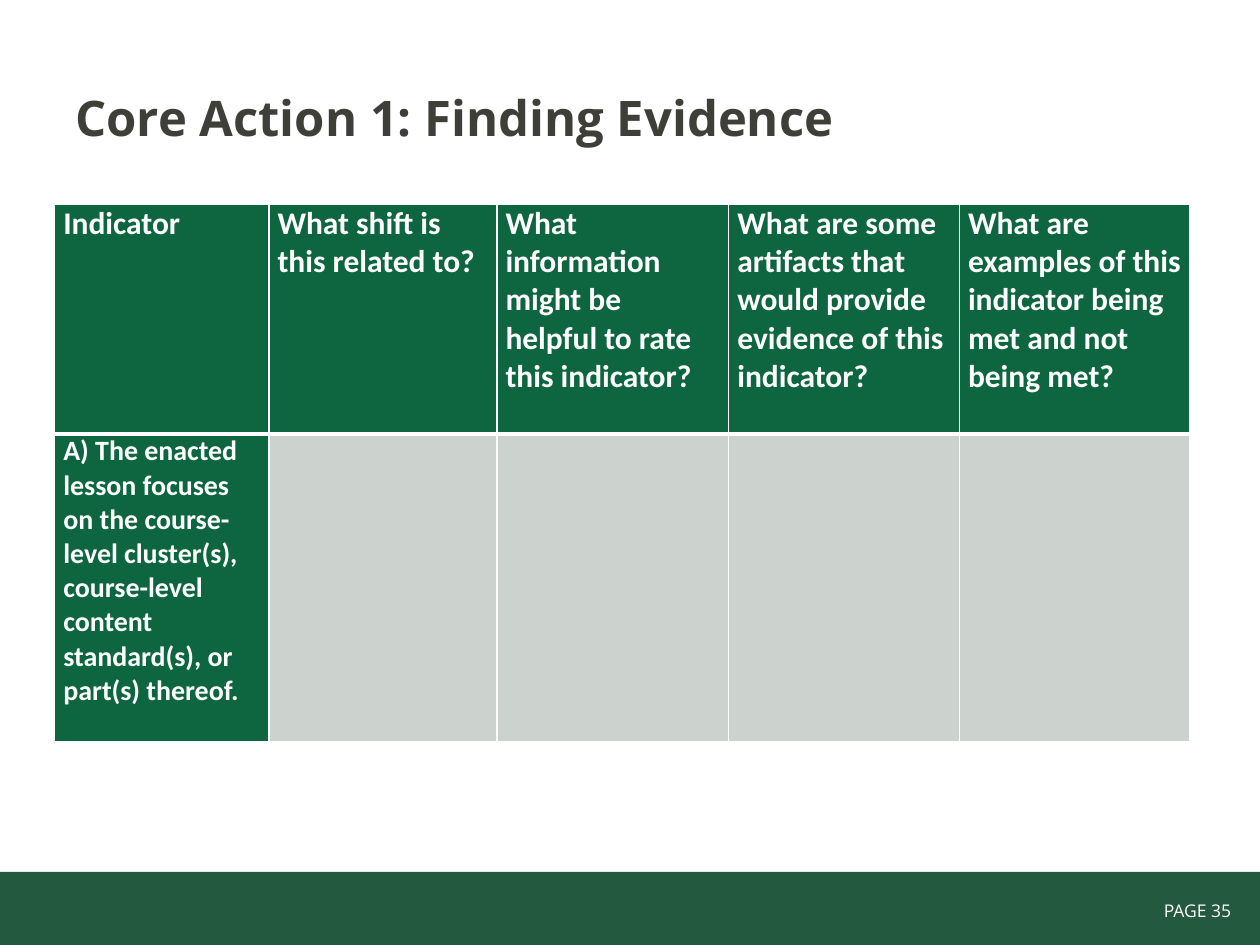
from lxml.etree import SubElement
from pptx import Presentation
from pptx.dml.color import RGBColor
from pptx.enum.shapes import MSO_SHAPE as Shape
from pptx.enum.text import MSO_ANCHOR as Anchor, PP_ALIGN as Align
from pptx.oxml.ns import qn
from pptx.util import Pt

WHITE = "FFFFFF"
GREEN = "0E6641"
GREY = "CCD3CF"
FOOTER_GREEN = "23593E"
DARK = "3F3F39"

COLUMN_WIDTHS = [122.4, 130.3, 132.5, 131.8, 131.8]
ROW_HEIGHTS = [131.5, 176]
HEADERS = [
    "Indicator",
    "What shift is this related to?",
    "What information might be helpful to rate this indicator?",
    "What are some artifacts that would provide evidence of this indicator?",
    "What are examples of this indicator being met and not being met?",
]
INDICATOR = ("A) The enacted lesson focuses on the course-level cluster(s), "
             "course-level content standard(s), or part(s) thereof.")


def color(hex_string):
    return RGBColor.from_string(hex_string)


def write(text_frame, text, font_name, size, hex_string, bold=False, align=Align.LEFT):
    text_frame.text = text
    text_frame.word_wrap = True
    paragraph = text_frame.paragraphs[0]
    paragraph.alignment = align
    font = paragraph.runs[0].font
    font.name = font_name
    font.size = Pt(size)
    font.bold = bold
    font.color.rgb = color(hex_string)


def add_text(slide, left, top, width, height, text, size, hex_string, **style):
    box = slide.shapes.add_textbox(Pt(left), Pt(top), Pt(width), Pt(height))
    box.text_frame.vertical_anchor = Anchor.MIDDLE
    write(box.text_frame, text, "Open Sans", size, hex_string, **style)


def add_footer(slide):
    band = slide.shapes.add_shape(Shape.RECTANGLE, Pt(0), Pt(498.2), Pt(720), Pt(41.8))
    band.shadow.inherit = False
    band.fill.solid()
    band.fill.fore_color.rgb = color(FOOTER_GREEN)
    band.line.fill.background()
    add_text(slide, 596, 510.5, 114.5, 19.5, "PAGE 35", 10, WHITE, align=Align.RIGHT)


def set_borders(cell, **widths):
    """Draw white borders; call before filling, as lines precede the fill in the XML."""
    properties = cell._tc.get_or_add_tcPr()
    for side in ("L", "R", "T", "B"):
        line = SubElement(properties, qn(f"a:ln{side}"), w=str(Pt(widths.get(side, 1))))
        fill = SubElement(line, qn("a:solidFill"))
        SubElement(fill, qn("a:srgbClr"), val=WHITE)


def format_cell(cell, fill, text="", size=18, **border_widths):
    set_borders(cell, **border_widths)
    cell.fill.solid()
    cell.fill.fore_color.rgb = color(fill)
    cell.margin_left = cell.margin_right = Pt(5)
    cell.margin_top = cell.margin_bottom = Pt(0)
    if text:
        write(cell.text_frame, text, "Calibri", size, WHITE, bold=True)


def add_evidence_table(slide):
    table = slide.shapes.add_table(
        len(ROW_HEIGHTS), len(COLUMN_WIDTHS), Pt(31.2), Pt(116.6),
        Pt(sum(COLUMN_WIDTHS)), Pt(sum(ROW_HEIGHTS))).table
    for column, width in zip(table.columns, COLUMN_WIDTHS):
        column.width = Pt(width)
    for row, height in zip(table.rows, ROW_HEIGHTS):
        row.height = Pt(height)
    for index, header in enumerate(HEADERS):
        format_cell(table.cell(0, index), GREEN, header, B=3)
        if index == 0:
            format_cell(table.cell(1, index), GREEN, INDICATOR, 16, T=3)
        else:
            format_cell(table.cell(1, index), GREY, T=3)


def main():
    presentation = Presentation()
    presentation.slide_width = Pt(720)
    presentation.slide_height = Pt(540)
    slide = presentation.slides.add_slide(presentation.slide_layouts[6])
    add_footer(slide)
    add_text(slide, 36, 21.6, 648, 90, "Core Action 1: Finding Evidence", 28, DARK, bold=True)
    add_evidence_table(slide)
    presentation.save("out.pptx")


if __name__ == "__main__":
    main()
